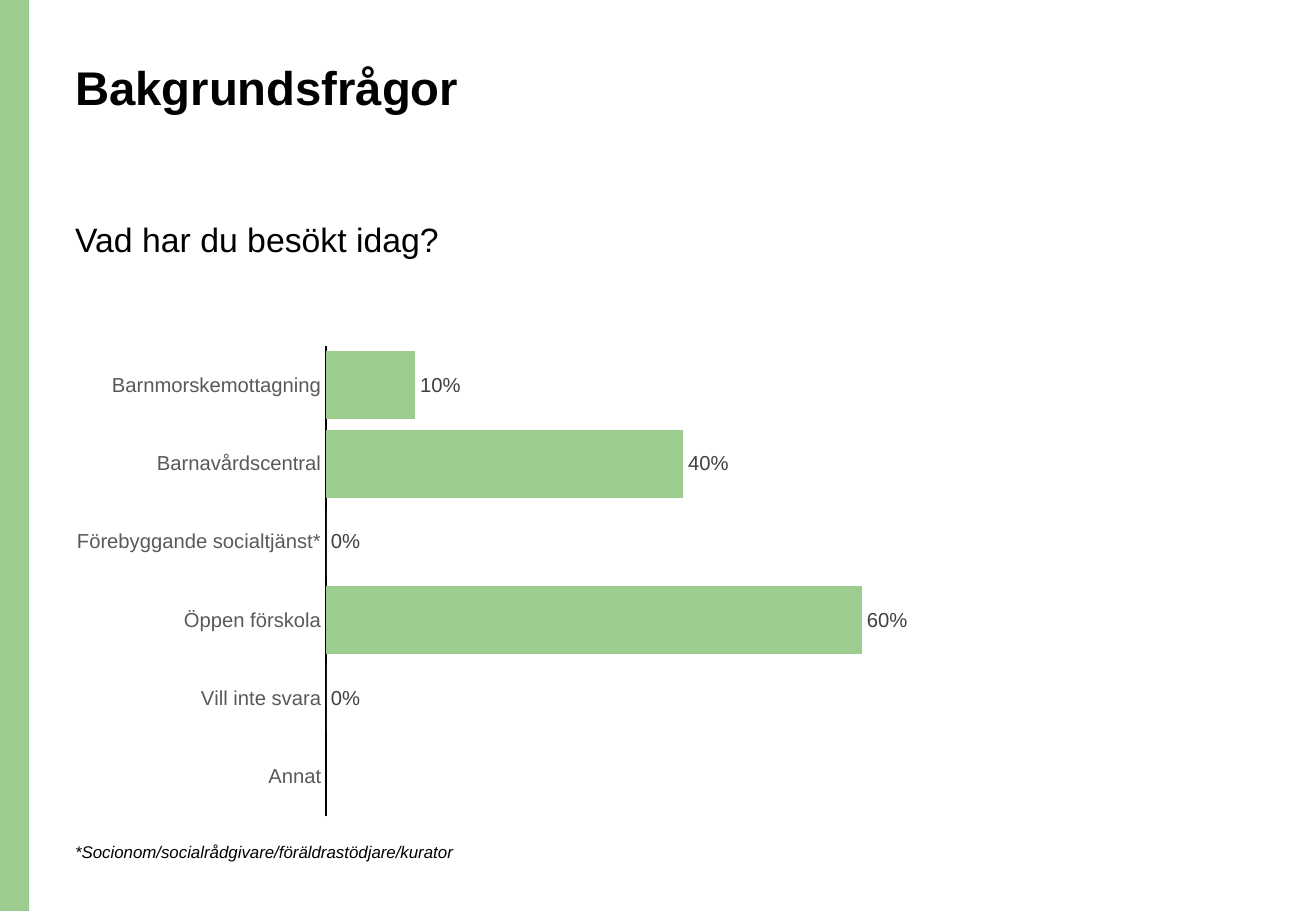
import lxml.etree
import pptx
import pptx.chart.data
import pptx.dml.color
import pptx.enum.chart
import pptx.enum.shapes
import pptx.enum.text
import pptx.oxml
import pptx.oxml.ns
import pptx.util

GREEN = "9DCC8F"
BLACK = "000000"
LEFT = 4.8
VISITS = {
    "Barnmorskemottagning": 0.1,
    "Barnavårdscentral": 0.4,
    "Förebyggande socialtjänst*": 0,
    "Öppen förskola": 0.6,
    "Vill inte svara": 0,
    "Annat": None,
}


def colour(value):
    return pptx.dml.color.RGBColor.from_string(value)


class SurveyPage:
    typeface = "Arial"

    def __init__(self, deck):
        self.deck = deck
        self.page = deck.slides.add_slide(deck.slide_layouts[5])

    def area(self, left, top, width, height):
        across, down = self.deck.slide_width / 100, self.deck.slide_height / 100
        return int(left * across), int(top * down), int(width * across), int(height * down)

    def style(self, font, size, tint, bold=False, italic=False):
        font.name = self.typeface
        font.size = pptx.util.Pt(size)
        font.color.rgb = colour(tint)
        font.bold = bold
        font.italic = italic

    def fill_text(self, box, text, size, spacing=1.0, **emphasis):
        frame = box.text_frame
        frame.word_wrap = True
        frame.auto_size = pptx.enum.text.MSO_AUTO_SIZE.NONE
        frame.vertical_anchor = pptx.enum.text.MSO_ANCHOR.TOP
        para = frame.paragraphs[0]
        para.alignment = pptx.enum.text.PP_ALIGN.LEFT
        para.line_spacing = spacing
        span = para.add_run()
        span.text = text
        self.style(span.font, size, BLACK, **emphasis)

    def title(self, text, area, size):
        box = self.page.shapes.title
        box.left, box.top, box.width, box.height = self.area(*area)
        self.fill_text(box, text, size, 0.9, bold=True)

    def text(self, text, area, size, spacing=1.0, **emphasis):
        box = self.page.shapes.add_textbox(*self.area(*area))
        self.fill_text(box, text, size, spacing, **emphasis)

    def band(self, area, tint):
        band = self.page.shapes.add_shape(
            pptx.enum.shapes.MSO_SHAPE.RECTANGLE, *self.area(*area)
        )
        band.shadow.inherit = False
        band.fill.solid()
        band.fill.fore_color.rgb = colour(tint)
        band.line.fill.background()

    def bars(self, values, area, plot_area, maximum):
        data = pptx.chart.data.CategoryChartData(number_format="0%")
        data.categories = list(values)
        data.add_series("Series 1", list(values.values()))
        chart = self.page.shapes.add_chart(
            pptx.enum.chart.XL_CHART_TYPE.BAR_CLUSTERED, *self.area(*area), data
        ).chart
        chart.has_title = False
        chart.has_legend = False
        self.style(chart.font, 10, BLACK)

        names = chart.category_axis
        names.reverse_order = True
        names.major_tick_mark = pptx.enum.chart.XL_TICK_MARK.NONE
        names.format.line.color.rgb = colour(BLACK)
        names.format.line.width = pptx.util.Pt(0.75)
        self.style(names.tick_labels.font, 12, "595959")

        scale = chart.value_axis
        scale.minimum_scale, scale.maximum_scale = 0, maximum
        scale.has_major_gridlines = False
        scale.visible = False

        plot = chart.plots[0]
        plot.gap_width = 15
        plot.vary_by_categories = False
        series = plot.series[0]
        series.format.fill.solid()
        series.format.fill.fore_color.rgb = colour(GREEN)
        labels = series.data_labels
        labels.show_value = True
        labels.position = pptx.enum.chart.XL_LABEL_POSITION.OUTSIDE_END
        labels.number_format = "0%"
        labels.number_format_is_linked = False
        self.style(labels.font, 12, "404040")
        self.place_plot(chart, plot_area)

    def place_plot(self, chart, plot_area):
        tag = pptx.oxml.ns.qn
        plot = chart.element.find(".//" + tag("c:plotArea"))
        layout = plot.find(tag("c:layout"))
        if layout is None:
            layout = pptx.oxml.parse_xml(f"<c:layout {pptx.oxml.ns.nsdecls('c')}/>")
            plot.insert(0, layout)
        manual = lxml.etree.SubElement(layout, tag("c:manualLayout"))
        settings = {"layoutTarget": "inner", "xMode": "edge", "yMode": "edge"}
        settings.update(zip("xywh", plot_area))
        for name, value in settings.items():
            lxml.etree.SubElement(manual, tag("c:" + name)).set("val", str(value))


def main():
    deck = pptx.Presentation()
    deck.slide_width = pptx.util.Inches(10.83)
    deck.slide_height = pptx.util.Inches(7.5)
    survey = SurveyPage(deck)
    survey.band((0, 0, 2.22, 100), GREEN)
    survey.title("Bakgrundsfrågor", (LEFT, 6.4, 86.24, 13.6), 28)
    survey.text("Vad har du besökt idag?", (LEFT, 23.87, 60, 9.87), 20, 0.9)
    survey.bars(VISITS, (LEFT, 36.93, 68.88, 53.73), (0.29, 0.02, 0.69, 0.96), 0.7)
    survey.text(
        "*Socionom/socialrådgivare/föräldrastödjare/kurator",
        (LEFT, 91.73, 50, 3.6), 10, italic=True,
    )
    deck.save("out.pptx")


if __name__ == "__main__":
    main()
